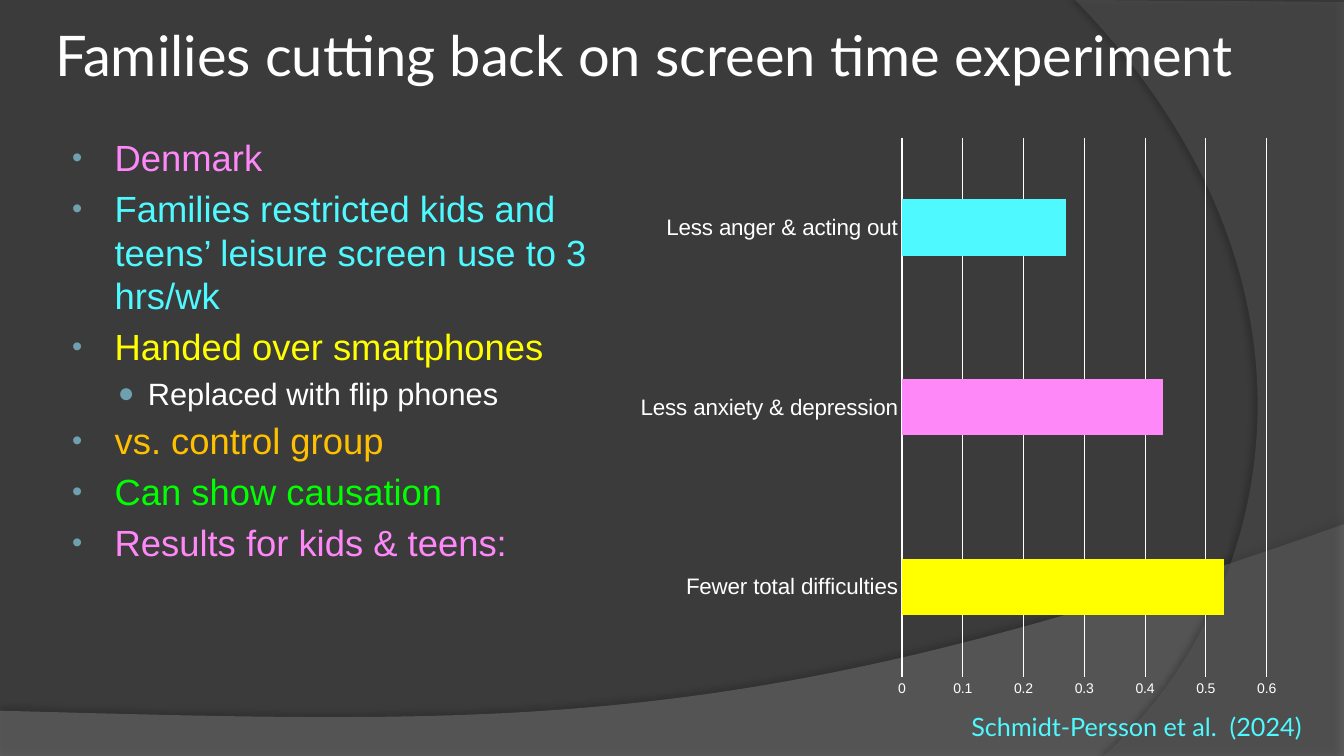
from dataclasses import dataclass

from lxml.etree import SubElement
from pptx import Presentation
from pptx.chart.data import CategoryChartData
from pptx.dml.color import RGBColor
from pptx.enum.chart import XL_CHART_TYPE, XL_TICK_MARK
from pptx.enum.text import MSO_ANCHOR, MSO_AUTO_SIZE, PP_ALIGN
from pptx.oxml import parse_xml
from pptx.oxml.ns import nsdecls, qn
from pptx.slide import Slide
from pptx.text.text import Font, TextFrame
from pptx.util import Cm, Pt

Point = tuple[float, float]


@dataclass(frozen=True)
class Theme:
    back: str = "3B3B3B"
    white: str = "FFFFFF"
    pink: str = "FF88F8"
    cyan: str = "4EF9FF"
    yellow: str = "FFFF00"
    orange: str = "FFC000"
    green: str = "00FF00"
    blue: str = "0070C0"
    bullet: str = "6EA0B0"
    head: str = "Lato"
    body: str = "Arial"
    title: float = 40
    main: float = 26
    sub: float = 22
    cite: float = 18
    label: float = 16
    tick: float = 10


@dataclass(frozen=True)
class Swoosh:
    """Straight corners closed by one cubic curve back to the first corner."""
    corners: list[Point]
    curve: list[Point]
    fill: str
    alpha: int
    shade: int
    dist: float
    angle: int


@dataclass(frozen=True)
class Level:
    left: float
    hang: float
    mark: str
    scale: int
    size: float


@dataclass(frozen=True)
class Item:
    text: str
    color: str
    level: int = 0


@dataclass(frozen=True)
class Bar:
    label: str
    value: float
    color: str


THEME = Theme()
WIDE, HIGH = 33.87, 19.05
SHAPES = [
    Swoosh([(0, 17.91), (0, HIGH), (WIDE, HIGH), (WIDE, 13.21)],
           [(18.92, 18.52), (13.23, 18.26), (0, 17.91)], "7F7F7F", 45, 35, 3.5, 270),
    Swoosh([(27.1, 0), (WIDE, 0.05), (WIDE, HIGH), (27.81, HIGH)],
           [(31.65, 15.72), (34.47, 7.62), (27.1, 0)], "5E5E5E", 40, 45, 4, 180),
]
LEVELS = [
    Level(1.17, 1.07, "•", 80, THEME.main),
    Level(2.01, 0.76, "●", 90, THEME.sub),
]
ITEMS = [
    Item("Denmark", THEME.pink),
    Item("Families restricted kids and teens’ leisure screen use to 3 hrs/wk", THEME.cyan),
    Item("Handed over smartphones", THEME.yellow),
    Item("Replaced with flip phones", THEME.white, 1),
    Item("vs. control group", THEME.orange),
    Item("Can show causation", THEME.green),
    Item("Results for kids & teens:", THEME.pink),
]
BARS = [
    Bar("Fewer total difficulties", 0.53, THEME.yellow),
    Bar("Less anxiety & depression", 0.43, THEME.pink),
    Bar("Less anger & acting out", 0.27, THEME.cyan),
]


def rgb(code: str) -> RGBColor:
    return RGBColor.from_string(code)


def style(font: Font, face: str, size: float, color: str) -> None:
    font.name, font.size = face, Pt(size)
    font.color.rgb = rgb(color)


def trace(start: Point, curve: list[Point], steps: int = 60) -> list[Point]:
    """Return points along a cubic curve."""
    dots = []
    for step in range(1, steps + 1):
        t = step / steps
        parts = ((1 - t) ** 3, 3 * t * (1 - t) ** 2, 3 * t * t * (1 - t), t ** 3)
        knots = [start, *curve]
        dots.append((sum(p * k[0] for p, k in zip(parts, knots)),
                     sum(p * k[1] for p, k in zip(parts, knots))))
    return dots


def draw_swoosh(slide: Slide, item: Swoosh) -> None:
    dots = item.corners + trace(item.corners[-1], item.curve)
    first, *rest = [(Cm(x), Cm(y)) for x, y in dots]
    pen = slide.shapes.build_freeform(*first, scale=1.0)
    pen.add_line_segments(rest, close=True)
    shape = pen.convert_to_shape()
    shape.fill.solid()
    shape.fill.fore_color.rgb = rgb(item.fill)
    shape.line.fill.background()
    shape.shadow.inherit = False
    props = shape.element.spPr
    tone = props.find(qn("a:solidFill")).find(qn("a:srgbClr"))
    SubElement(tone, qn("a:alpha"), val=str(item.alpha * 1000))
    shade = SubElement(props.find(qn("a:effectLst")), qn("a:outerShdw"),
                       blurRad=str(Pt(4)), dist=str(Pt(item.dist)),
                       dir=str(item.angle * 60000), algn="ctr", rotWithShape="0")
    dark = SubElement(shade, qn("a:srgbClr"), val="000000")
    SubElement(dark, qn("a:alpha"), val=str(item.shade * 1000))
    slide.shapes.title.element.addprevious(shape.element)


def set_title(slide: Slide, text: str) -> None:
    title = slide.shapes.title
    title.left, title.top, title.width, title.height = Cm(1.27), Cm(0.2), Cm(31.12), Cm(2.34)
    frame = title.text_frame
    frame.auto_size, frame.word_wrap = MSO_AUTO_SIZE.NONE, True
    frame.vertical_anchor = MSO_ANCHOR.MIDDLE
    frame.margin_left = frame.margin_right = Cm(0.13)
    frame.margin_top = frame.margin_bottom = Cm(0.13)
    frame.paragraphs[0].alignment = PP_ALIGN.LEFT
    run = frame.paragraphs[0].add_run()
    run.text = text
    style(run.font, THEME.head, THEME.title, THEME.white)


def add_item(frame: TextFrame, item: Item, first: bool) -> None:
    para = frame.paragraphs[0] if first else frame.add_paragraph()
    level = LEVELS[item.level]
    para.level = item.level
    props = para._p.get_or_add_pPr()
    props.set("marL", str(Cm(level.left)))
    props.set("indent", str(-Cm(level.hang)))
    tint = SubElement(props, qn("a:buClr"))
    SubElement(tint, qn("a:srgbClr"), val=THEME.bullet)
    SubElement(props, qn("a:buSzPct"), val=str(level.scale * 1000))
    SubElement(props, qn("a:buFont"), typeface=THEME.body)
    SubElement(props, qn("a:buChar"), char=level.mark)
    para.space_before = Pt(0 if first else level.size * 0.2)
    run = para.add_run()
    run.text = item.text
    style(run.font, THEME.body, level.size, item.color)


def add_list(slide: Slide) -> None:
    frame = slide.shapes.add_textbox(Cm(1.47), Cm(3.18), Cm(14.17), Cm(15.47)).text_frame
    frame.word_wrap = True
    frame.margin_top = Cm(0.23)
    for place, item in enumerate(ITEMS):
        add_item(frame, item, place == 0)


def add_bars(slide: Slide) -> None:
    data = CategoryChartData()
    data.categories = [bar.label for bar in BARS]
    data.add_series("Series 1", [bar.value for bar in BARS])
    chart = slide.shapes.add_chart(XL_CHART_TYPE.BAR_CLUSTERED, Cm(15.88), Cm(3.18),
                                   Cm(16.71), Cm(14.6), data).chart
    chart.has_legend = chart.has_title = False
    style(chart.font, THEME.body, THEME.tick, THEME.white)
    plot = chart.plots[0]
    plot.gap_width, plot.vary_by_categories = 219, False
    row = plot.series[0]
    row.format.fill.solid()
    row.format.fill.fore_color.rgb = rgb(THEME.blue)
    for place, bar in enumerate(BARS):
        fill = row.points[place].format.fill
        fill.solid()
        fill.fore_color.rgb = rgb(bar.color)
    cats, vals = chart.category_axis, chart.value_axis
    for axis, size in ((cats, THEME.label), (vals, THEME.tick)):
        axis.major_tick_mark = axis.minor_tick_mark = XL_TICK_MARK.NONE
        style(axis.tick_labels.font, THEME.body, size, THEME.white)
    vals.minimum_scale, vals.maximum_scale, vals.major_unit = 0, 0.6, 0.1
    vals.has_major_gridlines = True
    vals.format.line.fill.background()
    for line in (cats.format.line, vals.major_gridlines.format.line):
        line.color.rgb, line.width = rgb(THEME.white), Pt(0.75)
    area = chart._chartSpace.chart.plotArea
    for old in area.findall(qn("c:layout")):
        area.remove(old)
    area.insert(0, parse_xml(
        f'<c:layout {nsdecls("c")}><c:manualLayout><c:layoutTarget val="inner"/>'
        '<c:xMode val="edge"/><c:yMode val="edge"/><c:x val="0.41"/><c:y val="0.02"/>'
        '<c:w val="0.55"/><c:h val="0.93"/></c:manualLayout></c:layout>'))


def add_cite(slide: Slide, text: str) -> None:
    frame = slide.shapes.add_textbox(Cm(24.23), Cm(17.8), Cm(8.89), Cm(1.02)).text_frame
    frame.word_wrap, frame.auto_size = False, MSO_AUTO_SIZE.SHAPE_TO_FIT_TEXT
    run = frame.paragraphs[0].add_run()
    run.text = text
    style(run.font, THEME.head, THEME.cite, THEME.cyan)


def main() -> None:
    deck = Presentation()
    deck.slide_width, deck.slide_height = Cm(WIDE), Cm(HIGH)
    slide = deck.slides.add_slide(deck.slide_layouts[5])
    slide.background.fill.solid()
    slide.background.fill.fore_color.rgb = rgb(THEME.back)
    for item in SHAPES:
        draw_swoosh(slide, item)
    set_title(slide, "Families cutting back on screen time experiment")
    add_list(slide)
    add_bars(slide)
    add_cite(slide, "Schmidt-Persson et al.  (2024)")
    deck.save("out.pptx")


if __name__ == "__main__":
    main()
